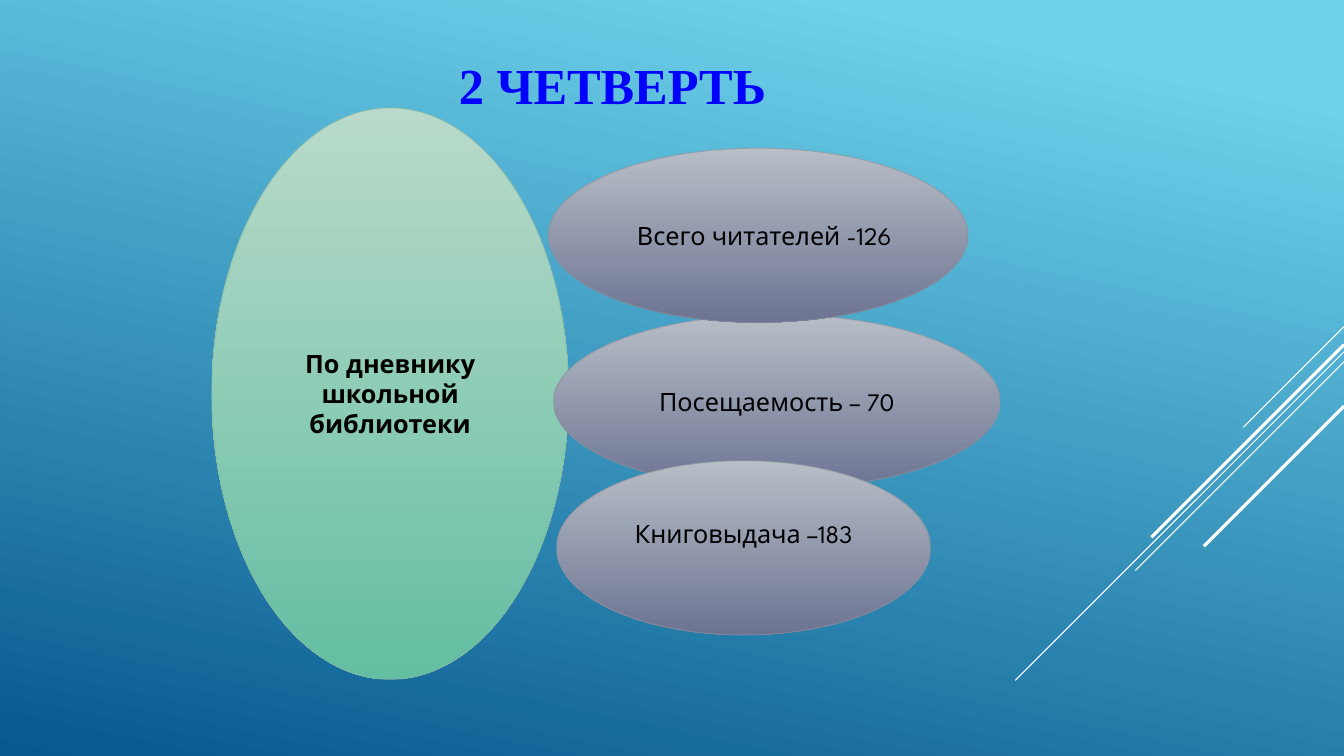
from lxml import etree
from pptx import Presentation
from pptx import util as u
from pptx.dml.color import RGBColor
from pptx.enum import shapes, text
from pptx.oxml.ns import qn

WIDTH, HEIGHT = 13.33, 7.5
FONT, HEAD_FONT = "League Spartan", "Times New Roman"
BLACK = RGBColor(0x00, 0x00, 0x00)
BLUE = RGBColor(0x00, 0x00, 0xFF)
WHITE = RGBColor(0xFF, 0xFF, 0xFF)
SKY = (RGBColor(0x6E, 0xD2, 0xEB), RGBColor(0x06, 0x58, 0x8E))
GREEN = (RGBColor(0xB9, 0xDA, 0xCA), RGBColor(0x63, 0xBE, 0xA2))
GRAY = (RGBColor(0xB8, 0xBE, 0xC6), RGBColor(0x6C, 0x74, 0x93))
GREEN_EDGE = RGBColor(0x8A, 0xB7, 0xA1)
GRAY_EDGE = RGBColor(0x89, 0x91, 0x9C)

TITLE = "2 ЧЕТВЕРТЬ"
SOURCE = "По дневнику школьной библиотеки"
# text, left, top, width, left inset, bottom inset; from back to front
FACTS = [
    ("Посещаемость – 70", 5.49, 3.12, 4.43, 0.1, 0.05),
    ("Всего читателей -126", 5.44, 1.47, 4.16, 0.22, 0.05),
    ("Книговыдача –183", 5.52, 4.57, 3.71, 0.1, 0.33),
]
FACT_HEIGHT = 1.73
# height at the right edge, run down to the left at 45 degrees, weight
RAYS = [(3.24, 1.0, 0.75), (3.49, 3.26, 0.75), (3.59, 2.07, 0.75),
        (3.42, 1.91, 2.25), (4.03, 1.39, 2.25)]


def blend(fill, pair, angle, start=0):
    """Fill with a two-colour gradient, angle counted clockwise."""
    fill.gradient()
    fill.gradient_angle = 360 - angle
    for stop, color, place in zip(fill.gradient_stops, pair, (start, 1)):
        stop.color.rgb = color
        stop.position = place


def style(para, font, size, color, bold):
    for run in para.runs:
        run.font.name, run.font.size = font, u.Pt(size)
        run.font.color.rgb, run.font.bold = color, bold


def bubble(slide, kind, box, words, pair, edge, bold=False, left=0.1, bottom=0.05):
    shape = slide.shapes.add_shape(kind, *map(u.Inches, box))
    shape.shadow.inherit = False
    blend(shape.fill, pair, 90)
    shape.line.color.rgb = edge
    shape.line.width = u.Pt(0.75)
    tint = shape.line._ln.find(".//" + qn("a:srgbClr"))
    etree.SubElement(tint, qn("a:alpha")).set("val", "60000")
    frame = shape.text_frame
    frame.word_wrap = True
    frame.vertical_anchor = text.MSO_ANCHOR.MIDDLE
    frame.margin_left, frame.margin_bottom = u.Inches(left), u.Inches(bottom)
    frame.text = words
    para = frame.paragraphs[0]
    para.alignment = text.PP_ALIGN.CENTER
    style(para, FONT, 18, BLACK, bold)


def ray(slide, top, run, weight):
    ends = (WIDTH, top, WIDTH - run, top + run)
    line = slide.shapes.add_connector(shapes.MSO_CONNECTOR.STRAIGHT,
                                      *map(u.Inches, ends))
    line.line.color.rgb = WHITE
    line.line.width = u.Pt(weight)
    etree.SubElement(line._element.spPr, qn("a:effectLst"))


def main():
    deck = Presentation()
    deck.slide_width, deck.slide_height = u.Inches(WIDTH), u.Inches(HEIGHT)
    slide = deck.slides.add_slide(deck.slide_layouts[5])
    blend(slide.background.fill, SKY, 102, 0.1)

    title = slide.shapes.title
    title.left, title.top = u.Inches(4.45), u.Inches(0.21)
    title.width, title.height = u.Inches(6.21), u.Inches(1.25)
    title.text_frame.text = TITLE
    title.text_frame.vertical_anchor = text.MSO_ANCHOR.MIDDLE
    head = title.text_frame.paragraphs[0]
    head.alignment = text.PP_ALIGN.LEFT
    style(head, HEAD_FONT, 36, BLUE, True)

    for top, run, weight in RAYS:
        ray(slide, top, run, weight)
    kinds = shapes.MSO_SHAPE
    bubble(slide, kinds.OVAL, (2.1, 1.07, 3.54, 5.67), SOURCE, GREEN, GREEN_EDGE, True)
    for words, left, top, width, inset, bottom in FACTS:
        bubble(slide, kinds.FLOWCHART_CONNECTOR, (left, top, width, FACT_HEIGHT),
               words, GRAY, GRAY_EDGE, left=inset, bottom=bottom)
    deck.save("out.pptx")


if __name__ == "__main__":
    main()
